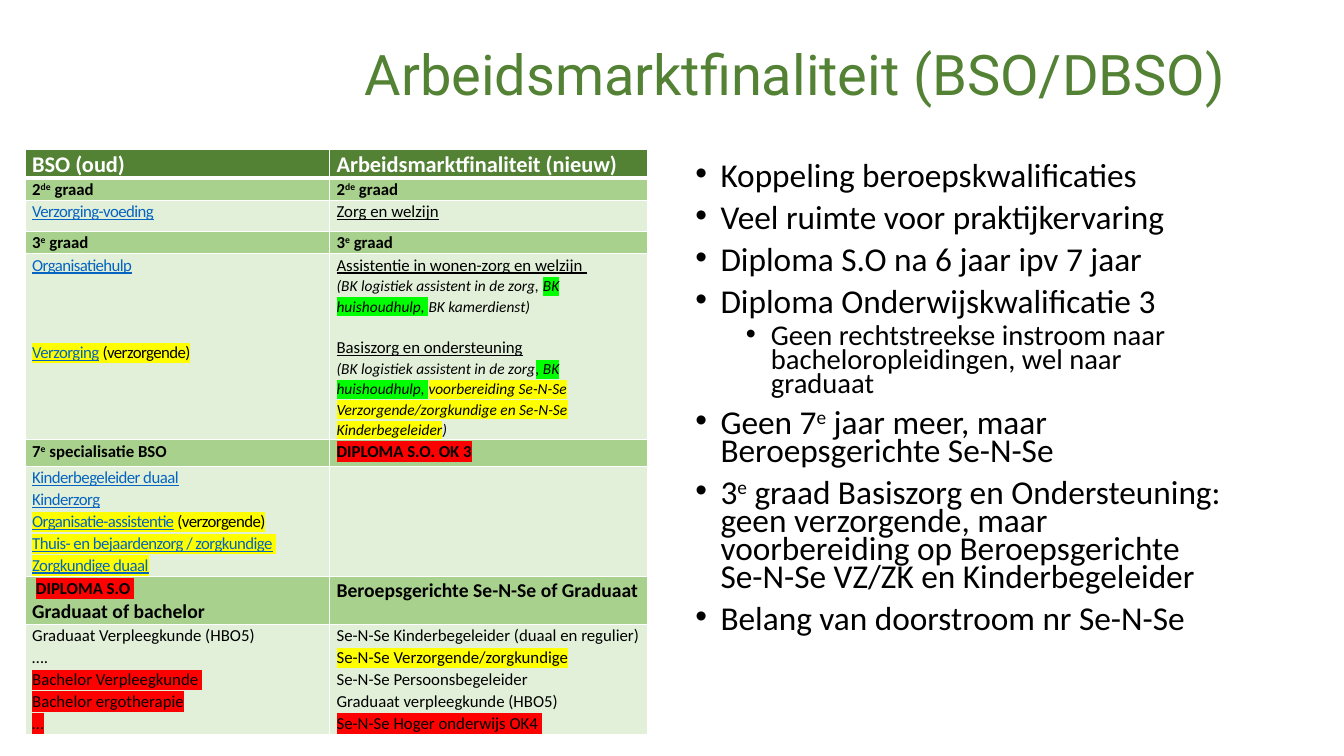
"""Build the slide comparing old BSO with the new arbeidsmarktfinaliteit."""
from lxml import etree
from pptx import Presentation
from pptx.dml.color import RGBColor
from pptx.enum.text import MSO_ANCHOR
from pptx.oxml.ns import qn
from pptx.util import Pt

MIDDLE, TOP = MSO_ANCHOR.MIDDLE, MSO_ANCHOR.TOP

THEME = {
    "title_font": "Roboto", "font": "Calibri",
    "title": "548235", "head": "548235", "band": "A9D18E", "light": "E2F0D9",
    "white": "FFFFFF", "text": "000000", "link": "0563C1",
    "yellow": "FFFF00", "green": "00FF00", "red": "FF0000",
    "title_size": 40, "head_size": 16, "cell_size": 12, "big_size": 14,
    "small_size": 11, "body_size": 23.8, "sub_size": 20.4,
}
MARKS = ("yellow", "green", "red")

TITLE = "Arbeidsmarktfinaliteit (BSO/DBSO)"
TITLE_BOX = (253.44, 20.16, 667.44, 70.56)
TABLE_AT = (18, 106.56)
BODY_BOX = (489.6, 114.48, 395.28, 342)
COLUMNS = (217.44, 227.52)

SECOND = [[("2", "bold"), ("de", "bold sup"), (" graad", "bold")]]
THIRD = [[("3", "bold"), ("e", "bold sup"), (" graad", "bold")]]

ROWS = [
    (20.8, "head", [[("BSO (oud)", "bold head white")]],
     [[("Arbeidsmarktfinaliteit (nieuw)", "bold head white")]]),
    (15.8, "band", SECOND, SECOND),
    (22.3, "light", [[("Verzorging-voeding", "link")]], [[("Zorg en welzijn", "under")]]),
    (15.8, "band", THIRD, THIRD),
    (133, "light",
     [[("Organisatiehulp", "link")],
      [("Verzorging", "link yellow"), (" (verzorgende)", "tight yellow")]],
     [[("Assistentie in wonen-zorg en welzijn ", "under")],
      [("(BK logistiek assistent in de zorg, ", "small italic"),
       ("BK huishoudhulp, ", "small italic green"),
       ("BK kamerdienst)", "small italic")],
      [("Basiszorg en ondersteuning", "under")],
      [("(BK logistiek assistent in de zorg", "small italic"),
       (", BK huishoudhulp, ", "small italic green"),
       ("voorbereiding Se-N-Se Verzorgende/zorgkundige en Se-N-Se Kinderbegeleider",
        "small italic yellow"),
       (")", "small italic")]]),
    (19, "band",
     [[("7", "bold"), ("e", "bold sup"), (" specialisatie BSO", "bold")]],
     [[("DIPLOMA S.O. OK 3", "bold red")]]),
    (78.8, "light",
     [[("Kinderbegeleider duaal", "link")],
      [("Kinderzorg", "link")],
      [("Organisatie-assistentie", "link yellow"), (" (verzorgende)", "tight yellow")],
      [("Thuis- en bejaardenzorg / zorgkundige", "link yellow"), (" ", "tight yellow")],
      [("Zorgkundige duaal", "link yellow")]],
     []),
    (34, "band",
     [[(" ", "bold"), ("DIPLOMA S.O ", "bold red")],
      [("Graduaat of bachelor", "bold big")]],
     [[("Beroepsgerichte Se-N-Se of Graduaat", "bold big")]]),
    (78.8, "light",
     [[("Graduaat Verpleegkunde (HBO5)", "")],
      [("….", "")],
      [("Bachelor Verpleegkunde ", "red")],
      [("Bachelor ergotherapie", "red")],
      [("…", "red")]],
     [[("Se-N-Se Kinderbegeleider (duaal en regulier)", "")],
      [("Se-N-Se Verzorgende/zorgkundige", "yellow")],
      [("Se-N-Se Persoonsbegeleider", "")],
      [("Graduaat verpleegkunde (HBO5)", "")],
      [("Se-N-Se Hoger onderwijs OK4 ", "red")]]),
]
GAPS = {"Verzorging": 47, "Basiszorg en ondersteuning": 14.4}

BULLETS = [
    (0, [("Koppeling beroepskwalificaties", "body")]),
    (0, [("Veel ruimte voor praktijkervaring", "body")]),
    (0, [("Diploma S.O na 6 jaar ipv 7 jaar", "body")]),
    (0, [("Diploma Onderwijskwalificatie 3", "body")]),
    (1, [("Geen rechtstreekse instroom naar bacheloropleidingen, wel naar graduaat", "sub")]),
    (0, [("Geen 7", "body"), ("e", "body sup"),
         (" jaar meer, maar Beroepsgerichte Se-N-Se", "body")]),
    (0, [("3", "body"), ("e", "body sup"),
         (" graad Basiszorg en Ondersteuning: geen verzorgende, maar voorbereiding op "
          "Beroepsgerichte Se-N-Se VZ/ZK en Kinderbegeleider", "body")]),
    (0, [("Belang van doorstroom nr Se-N-Se", "body")]),
]


def rgb(name):
    return RGBColor.from_string(THEME[name])


def pick(flags, names, default):
    return next((n for n in names if n in flags), default)


def add_run(p, text, style):
    flags = style.split()
    r = p.add_run()
    r.text = text
    f = r.font
    size = pick(flags, ("title", "head", "big", "small", "body", "sub"), "cell")
    f.size = Pt(THEME[size + "_size"])
    f.bold = "bold" in flags
    f.italic = "italic" in flags
    f.underline = "under" in flags or "link" in flags
    f.color.rgb = rgb(pick(flags, ("title", "white", "link"), "text"))
    rPr = r._r.get_or_add_rPr()
    if "sup" in flags:
        rPr.set("baseline", "30000")
    if "link" in flags or "tight" in flags:
        rPr.set("spc", "-40")
    mark = pick(flags, MARKS, None)
    if mark:
        highlight = etree.SubElement(rPr, qn("a:highlight"))
        etree.SubElement(highlight, qn("a:srgbClr"), val=THEME[mark])
    f.name = THEME["title_font" if "title" in flags else "font"]


def add_paragraph(tf, index, runs, spacing, before=0):
    p = tf.paragraphs[0] if index == 0 else tf.add_paragraph()
    p.line_spacing = spacing
    if index and before:
        p.space_before = Pt(before)
    for text, style in runs:
        add_run(p, text, style)
    return p


def add_box(s, box, anchor):
    tf = s.shapes.add_textbox(*map(Pt, box)).text_frame
    tf.word_wrap = True
    tf.vertical_anchor = anchor
    return tf


def set_borders(cell, row):
    tcPr = cell._tc.get_or_add_tcPr()
    widths = {"L": 1, "R": 1, "T": 3 if row == 1 else 1, "B": 3 if row == 0 else 1}
    for i, (side, width) in enumerate(widths.items()):
        ln = etree.Element(qn("a:ln" + side), w=str(Pt(width)))
        fill = etree.SubElement(ln, qn("a:solidFill"))
        etree.SubElement(fill, qn("a:srgbClr"), val=THEME["white"])
        tcPr.insert(i, ln)


def add_comparison(s):
    total = sum(row[0] for row in ROWS)
    frame = s.shapes.add_table(len(ROWS), len(COLUMNS), *map(Pt, TABLE_AT),
                               Pt(sum(COLUMNS)), Pt(total))
    table = frame.table
    table.horz_banding = False
    for column, width in zip(table.columns, COLUMNS):
        column.width = Pt(width)
    for i, (height, fill, *cells) in enumerate(ROWS):
        table.rows[i].height = Pt(height)
        for j, paragraphs in enumerate(cells):
            cell = table.cell(i, j)
            cell.margin_left = cell.margin_right = Pt(5)
            cell.margin_top = cell.margin_bottom = Pt(0)
            cell.fill.solid()
            cell.fill.fore_color.rgb = rgb(fill)
            set_borders(cell, i)
            for k, runs in enumerate(paragraphs):
                add_paragraph(cell.text_frame, k, runs, 1.07, GAPS.get(runs[0][0], 0))


def add_bullets(s):
    tf = add_box(s, BODY_BOX, TOP)
    for i, (level, runs) in enumerate(BULLETS):
        p = add_paragraph(tf, i, runs, 0.7, 5 if level else 10)
        p.level = level
        pPr = p._p.get_or_add_pPr()
        pPr.set("marL", str(Pt(18 + 36 * level)))
        pPr.set("indent", str(Pt(-18)))
        etree.SubElement(pPr, qn("a:buFont"), typeface="Arial")
        etree.SubElement(pPr, qn("a:buChar"), char="•")


def main():
    prs = Presentation()
    prs.slide_width, prs.slide_height = Pt(960), Pt(540)
    s = prs.slides.add_slide(prs.slide_layouts[6])
    add_paragraph(add_box(s, TITLE_BOX, MIDDLE), 0, [(TITLE, "title")], 0.9)
    add_comparison(s)
    add_bullets(s)
    prs.save("out.pptx")


if __name__ == "__main__":
    main()
